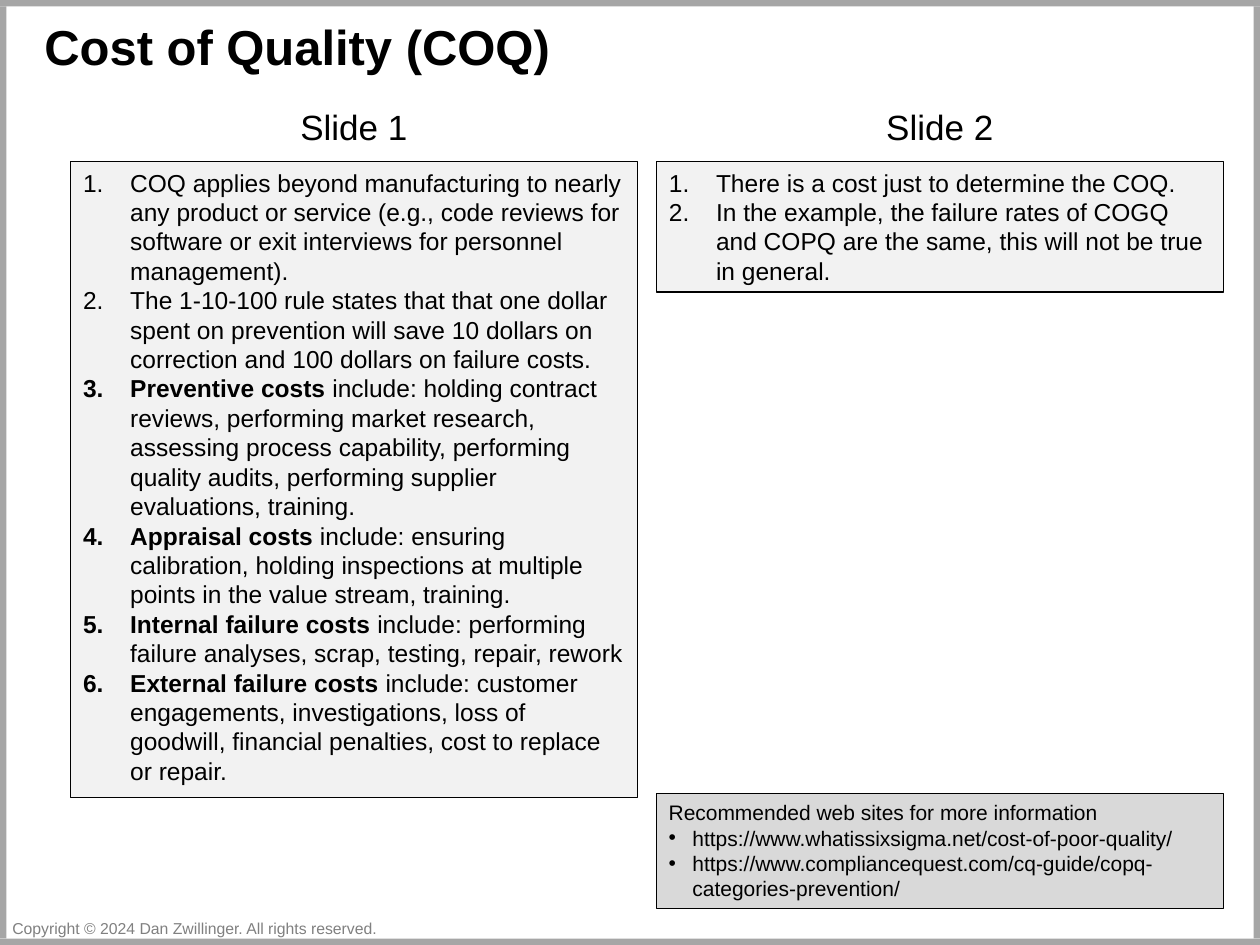
from lxml import etree
from pptx import Presentation
from pptx import util as u
from pptx.dml.color import RGBColor
from pptx.enum import shapes, text
from pptx.oxml.ns import qn

BLACK = RGBColor(0x00, 0x00, 0x00)
GRAY = RGBColor(0x80, 0x80, 0x80)
FRAME = RGBColor(0xA6, 0xA6, 0xA6)
PALE = RGBColor(0xF2, 0xF2, 0xF2)
SILVER = RGBColor(0xD9, 0xD9, 0xD9)

FONT = "Arial"
WIDTH, HEIGHT = 25.4, 19.05
COLUMNS = (1.42, 13.23)
COLUMN_WIDTH = 11.43
HEADING_TOP, LIST_TOP, SITES_TOP = 2.0, 3.25, 16.0

# Each paragraph is a (bold lead, plain text) pair
FIRST_NOTES = [
    ("", "COQ applies beyond manufacturing to nearly any product or service "
         "(e.g., code reviews for software or exit interviews for personnel management)."),
    ("", "The 1-10-100 rule states that that one dollar spent on prevention will "
         "save 10 dollars on correction and 100 dollars on failure costs."),
    ("Preventive costs ", "include: holding contract reviews, performing market research, "
     "assessing process capability, performing quality audits, performing supplier "
     "evaluations, training."),
    ("Appraisal costs ", "include: ensuring calibration, holding inspections at multiple "
     "points in the value stream, training."),
    ("Internal failure costs ", "include: performing failure analyses, scrap, testing, "
     "repair, rework"),
    ("External failure costs ", "include: customer engagements, investigations, loss of "
     "goodwill, financial penalties, cost to replace or repair."),
]
SECOND_NOTES = [
    ("", "There is a cost just to determine the COQ."),
    ("", "In the example, the failure rates of COGQ and COPQ are the same, "
         "this will not be true in general."),
]
SITES = [
    ("", "https://www.whatissixsigma.net/cost-of-poor-quality/"),
    ("", "https://www.compliancequest.com/cq-guide/copq-categories-prevention/"),
]


def place(box, left, top, width, height):
    box.left, box.top = u.Cm(left), u.Cm(top)
    box.width, box.height = u.Cm(width), u.Cm(height)


def add_marker(para, marker, indent):
    """Hang the paragraph behind a number or a bullet sign."""
    properties = para._p.get_or_add_pPr()
    properties.set("marL", str(u.Cm(indent)))
    properties.set("indent", str(-u.Cm(indent)))
    etree.SubElement(properties, qn("a:buFont")).set("typeface", FONT)
    if marker == "number":
        etree.SubElement(properties, qn("a:buAutoNum")).set("type", "arabicPeriod")
    else:
        etree.SubElement(properties, qn("a:buChar")).set("char", marker)


def write(box, paragraphs, size=14, color=BLACK, bold=False, marker=None, indent=0.95,
          align=text.PP_ALIGN.LEFT, wrap=True, append=False):
    """Write (lead, text) paragraphs into a box with one format."""
    frame = box.text_frame
    frame.word_wrap = wrap
    frame.auto_size = text.MSO_AUTO_SIZE.NONE
    frame.vertical_anchor = text.MSO_ANCHOR.TOP
    for index, (lead, rest) in enumerate(paragraphs):
        para = frame.add_paragraph() if index or append else frame.paragraphs[0]
        if marker:
            add_marker(para, marker, indent)
        para.alignment = align
        para.space_before = u.Pt(0)
        for words, heavy in ((lead, True), (rest, bold)):
            if words:
                span = para.add_run()
                span.text = words
                span.font.name, span.font.size = FONT, u.Pt(size)
                span.font.bold = heavy
                span.font.color.rgb = color


def outline(box, fill):
    box.fill.solid()
    box.fill.fore_color.rgb = fill
    box.line.color.rgb = BLACK
    box.line.width = u.Pt(0.75)


def add_text_box(slide, left, top, width, height):
    return slide.shapes.add_textbox(u.Cm(left), u.Cm(top), u.Cm(width), u.Cm(height))


def add_bar(slide, left, top, width, height):
    bar = slide.shapes.add_shape(shapes.MSO_SHAPE.RECTANGLE, u.Cm(left), u.Cm(top),
                                 u.Cm(width), u.Cm(height))
    bar.shadow.inherit = False
    bar.fill.solid()
    bar.fill.fore_color.rgb = FRAME
    bar.line.fill.background()


def add_column(heading, body, left, name, notes, height):
    place(heading, left, HEADING_TOP, COLUMN_WIDTH, 1.11)
    write(heading, [("", name)], size=20, align=text.PP_ALIGN.CENTER)
    place(body, left, LIST_TOP, COLUMN_WIDTH, height)
    outline(body, PALE)
    write(body, notes, marker="number")


def main():
    deck = Presentation()
    deck.slide_width, deck.slide_height = u.Cm(WIDTH), u.Cm(HEIGHT)
    slide = deck.slides.add_slide(deck.slide_layouts.get_by_name("Comparison"))

    # Frame around the slide
    bar = 0.13
    add_bar(slide, 0, 0, WIDTH, bar)
    add_bar(slide, 0, HEIGHT - bar, WIDTH, bar)
    for left in (0, WIDTH - bar):
        add_bar(slide, left, bar, bar, HEIGHT - 2 * bar)

    # Title
    title = slide.shapes.title
    place(title, 0.64, 0.2, 20, 1.45)
    write(title, [("", "Cost of Quality (COQ)")], size=28, bold=True)

    # Two columns of numbered notes
    holders = {holder.placeholder_format.idx: holder for holder in slide.placeholders}
    add_column(holders[1], holders[2], COLUMNS[0], "Slide 1", FIRST_NOTES, 12.83)
    add_column(holders[3], holders[4], COLUMNS[1], "Slide 2", SECOND_NOTES, 2.64)

    # Web sites
    sites = add_text_box(slide, COLUMNS[1], SITES_TOP, COLUMN_WIDTH, 2.31)
    outline(sites, SILVER)
    write(sites, [("", "Recommended web sites for more information")], size=12)
    write(sites, SITES, size=12, marker="•", indent=0.48, append=True)

    # Copyright line
    notice = add_text_box(slide, 0, 18.39, 7.98, 0.64)
    write(notice, [("", "Copyright © 2024 Dan Zwillinger. All rights reserved.")],
          size=9, color=GRAY, wrap=False)

    deck.save("out.pptx")


if __name__ == "__main__":
    main()
